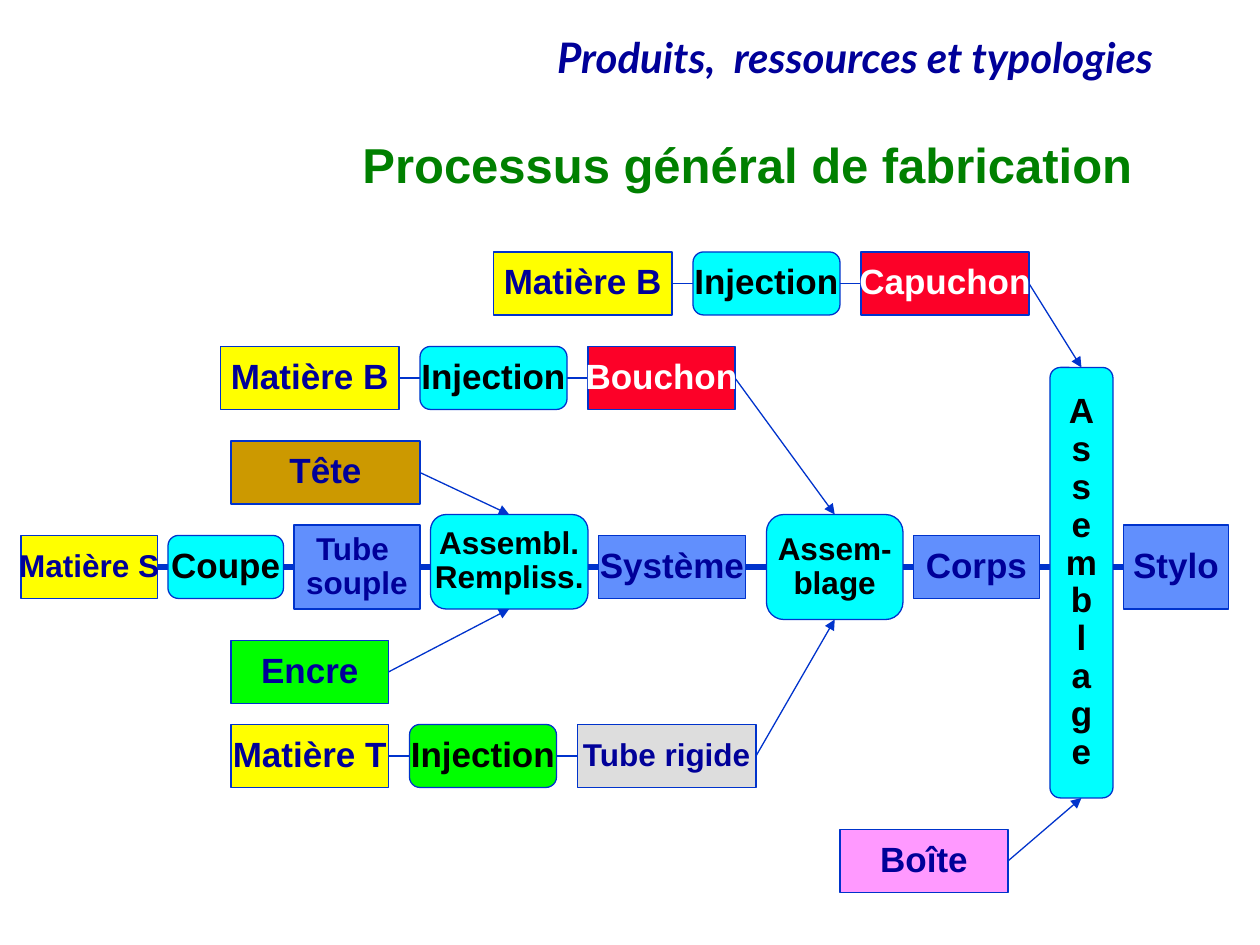
import pptx
import pptx.util
import pptx.dml.color
import pptx.enum.shapes
import pptx.enum.text
import pptx.oxml.ns
import lxml.etree

Pt = pptx.util.Pt
RGBColor = pptx.dml.color.RGBColor
SHAPES = pptx.enum.shapes.MSO_SHAPE
ALIGN = pptx.enum.text.PP_ALIGN
qn = pptx.oxml.ns.qn

BLUE = RGBColor(0x00, 0x33, 0xCC)
NAVY = RGBColor(0x00, 0x00, 0x99)
DARK_GREEN = RGBColor(0x00, 0x80, 0x00)
BLACK = RGBColor(0x00, 0x00, 0x00)
WHITE = RGBColor(0xFF, 0xFF, 0xFF)
RED = RGBColor(0xFC, 0x01, 0x28)
YELLOW = RGBColor(0xFF, 0xFF, 0x00)
CYAN = RGBColor(0x00, 0xFF, 0xFF)
PERIWINKLE = RGBColor(0x61, 0x8F, 0xFD)
PINK = RGBColor(0xFF, 0x99, 0xFF)
GREY = RGBColor(0xDD, 0xDD, 0xDD)
GREEN = RGBColor(0x00, 0xFF, 0x00)
OCHRE = RGBColor(0xCC, 0x99, 0x00)

deck = pptx.Presentation()
deck.slide_width, deck.slide_height = Pt(720), Pt(540)
slide = deck.slides.add_slide(deck.slide_layouts[6])


def write(frame, paragraphs, size, color, align, font="Arial", italic=None):
    for number, lines in enumerate(paragraphs):
        paragraph = frame.paragraphs[0] if number == 0 else frame.add_paragraph()
        paragraph.alignment = align
        paragraph.line_spacing = 0.9
        for position, line in enumerate(lines.split("\n")):
            if position:
                paragraph.add_line_break()
            run = paragraph.add_run()
            run.text = line
            run.font.name = font
            run.font.size = Pt(size)
            run.font.bold = True
            run.font.italic = italic
            run.font.color.rgb = color


def connect(x1, y1, x2, y2, width=0.75, arrow=False):
    link = slide.shapes.add_connector(
        pptx.enum.shapes.MSO_CONNECTOR.STRAIGHT, Pt(x1), Pt(y1), Pt(x2), Pt(y2))
    link.line.color.rgb = BLUE
    link.line.width = Pt(width)
    if arrow:
        lxml.etree.SubElement(link.line._get_or_add_ln(), qn("a:tailEnd"), type="triangle")
    lxml.etree.SubElement(link._element.spPr, qn("a:effectLst"))


headings = [
    ("Produits,  ressources et typologies", 90, 18, 576, 67, 24, NAVY, "Lato", True,
     pptx.enum.text.MSO_ANCHOR.TOP),
    ("Processus général de fabrication", 84, 78, 570, 36, 28, DARK_GREEN, "Arial", None,
     pptx.enum.text.MSO_ANCHOR.MIDDLE),
]
for words, x, y, w, h, size, color, font, italic, anchor in headings:
    heading = slide.shapes.add_textbox(Pt(x), Pt(y), Pt(w), Pt(h)).text_frame
    heading.word_wrap = True
    heading.vertical_anchor = anchor
    write(heading, [words], size, color, ALIGN.RIGHT, font, italic)

main_axis = 324
for start, end in [(90, 168), (234, 342), (426, 522), (594, 642)]:
    connect(start, main_axis, end, main_axis, width=3)

for start, end, y in [(384, 492, 162), (228, 336, 216), (222, 330, 432)]:
    connect(start, y, end, y)

for ends in [(576, 492, 618, 456), (588, 162, 618, 210), (420, 216, 477, 294),
             (432, 432, 477, 354), (240, 270, 291, 294), (222, 384, 291, 348)]:
    connect(*ends, arrow=True)

products = [
    (["Matière B"], 282, 144, 102, 36, YELLOW, NAVY, 20),
    (["Capuchon"], 492, 144, 96, 36, RED, WHITE, 20),
    (["Matière B"], 126, 198, 102, 36, YELLOW, NAVY, 20),
    (["Bouchon"], 336, 198, 84, 36, RED, WHITE, 20),
    (["Tête"], 132, 252, 108, 36, OCHRE, NAVY, 20),
    (["Matière S"], 12, 306, 78, 36, YELLOW, NAVY, 18),
    (["Tube ", "souple"], 168, 300, 72, 48, PERIWINKLE, NAVY, 18),
    (["Système"], 342, 306, 84, 36, PERIWINKLE, NAVY, 20),
    (["Corps"], 522, 306, 72, 36, PERIWINKLE, NAVY, 20),
    (["Stylo"], 642, 300, 60, 48, PERIWINKLE, NAVY, 20),
    (["Encre"], 132, 366, 90, 36, GREEN, NAVY, 20),
    (["Matière T"], 132, 414, 90, 36, YELLOW, NAVY, 20),
    (["Tube rigide"], 330, 414, 102, 36, GREY, NAVY, 18),
    (["Boîte"], 480, 474, 96, 36, PINK, NAVY, 20),
]
operations = [
    (["Injection"], 396, 144, 84, 36, CYAN, BLACK, 20),
    (["Injection"], 240, 198, 84, 36, CYAN, BLACK, 20),
    (["Coupe"], 96, 306, 66, 36, CYAN, BLACK, 20),
    (["Assembl.", "Rempliss."], 246, 294, 90, 54, CYAN, BLACK, 18),
    (["Assem-\nblage"], 438, 294, 78, 60, CYAN, BLACK, 18),
    (["Injection"], 234, 414, 84, 36, GREEN, BLACK, 20),
    (["A\ns\ns\nemb\nl\na\ng\ne"], 600, 210, 36, 246, CYAN, BLACK, 20),
]
for outline, steps in [(SHAPES.RECTANGLE, products), (SHAPES.ROUNDED_RECTANGLE, operations)]:
    for words, x, y, w, h, fill, color, size in steps:
        step = slide.shapes.add_shape(outline, Pt(x), Pt(y), Pt(w), Pt(h))
        step.shadow.inherit = False
        step.fill.solid()
        step.fill.fore_color.rgb = fill
        step.line.color.rgb = BLUE
        step.line.width = Pt(0.75)
        step.text_frame.word_wrap = h > w
        step.text_frame.vertical_anchor = pptx.enum.text.MSO_ANCHOR.MIDDLE
        write(step.text_frame, words, size, color, ALIGN.CENTER)

deck.save("out.pptx")
